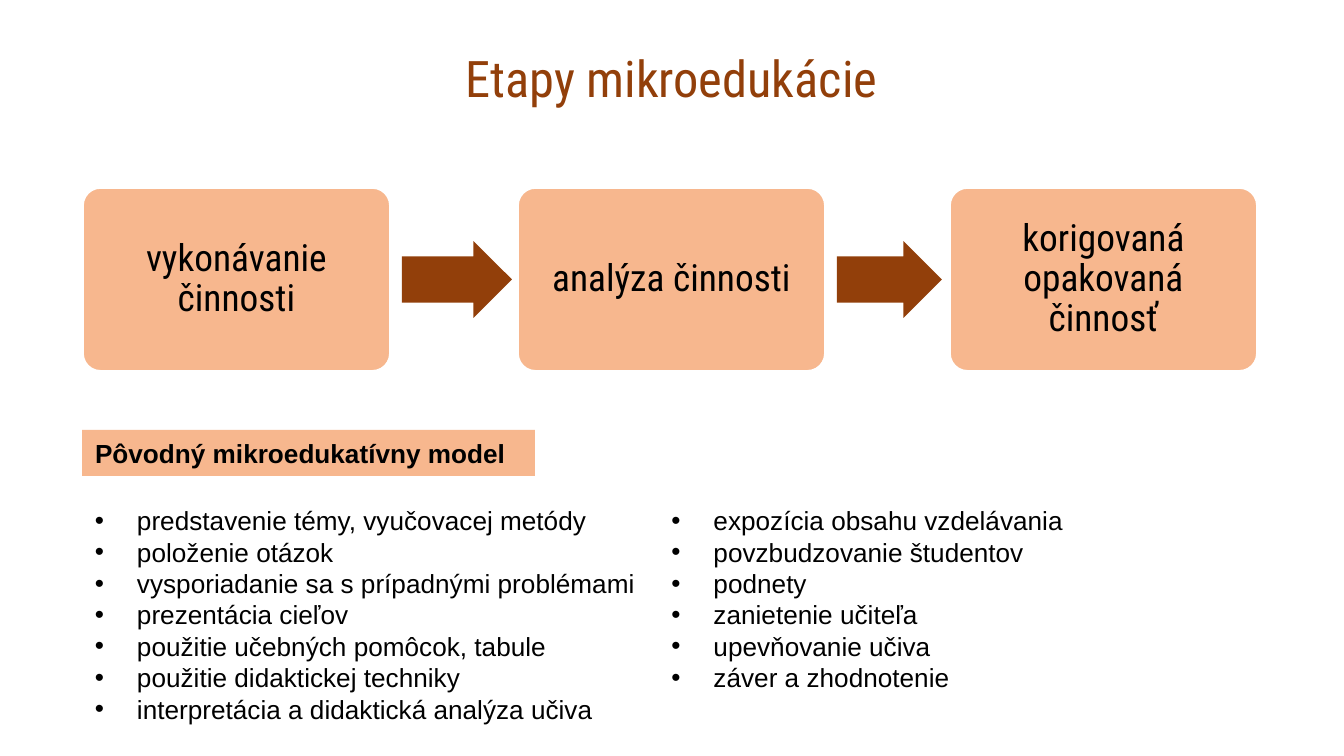
from lxml.etree import SubElement
from pptx import Presentation
from pptx.dml.color import RGBColor
from pptx.enum.shapes import MSO_SHAPE as Shape
from pptx.enum.text import MSO_ANCHOR as Anchor, PP_ALIGN as Align
from pptx.oxml.ns import qn
from pptx.util import Pt

TITLE = "Etapy mikroedukácie"
STAGES = [
    (82, "vykonávanie činnosti"),
    (517, "analýza činnosti"),
    (949, "korigovaná opakovaná činnosť"),
]
ARROWS = [(402, 110), (837, 105)]
LABEL = "Pôvodný mikroedukatívny model"
ITEMS = [
    "predstavenie témy, vyučovacej metódy",
    "položenie otázok",
    "vysporiadanie sa s prípadnými problémami",
    "prezentácia cieľov",
    "použitie učebných pomôcok, tabule",
    "použitie didaktickej techniky",
    "interpretácia a didaktická analýza učiva",
    "expozícia obsahu vzdelávania",
    "povzbudzovanie študentov",
    "podnety",
    "zanietenie učiteľa",
    "upevňovanie učiva",
    "záver a zhodnotenie",
]
COLORS = {"brown": "923F0A", "peach": "F7B78E", "black": "000000", "white": "FFFFFF"}
HEAD_FONT, BODY_FONT = "Roboto Condensed", "Arial"
EMU_PER_PX = 914400 / 134.4
STAGE_TOP, STAGE_WIDTH, STAGE_HEIGHT = 187, 309, 185
ARROW_HEIGHT = 77
INDENT = 42


def px(length):
    return round(length * EMU_PER_PX)


def color(name):
    return RGBColor.from_string(COLORS[name])


def add_box(page, kind, place, fill, line=None):
    box = page.shapes.add_shape(kind, *map(px, place))
    box.shadow.inherit = False
    box.fill.solid()
    box.fill.fore_color.rgb = color(fill)
    if line:
        box.line.color.rgb = color(line)
        box.line.width = Pt(2)
    else:
        box.line.fill.background()
    return box


def write(box, lines, size, font, ink="black", align=Align.LEFT, inset=13, bold=False):
    frame = box.text_frame
    frame.word_wrap = True
    frame.vertical_anchor = Anchor.MIDDLE
    frame.margin_left = frame.margin_right = px(inset)
    frame.margin_top = frame.margin_bottom = px(min(inset, 13))
    for number, line in enumerate(lines):
        para = frame.add_paragraph() if number else frame.paragraphs[0]
        para.alignment = align
        span = para.add_run()
        span.text = line
        span.font.size = Pt(size)
        span.font.name = font
        span.font.bold = bold
        span.font.color.rgb = color(ink)
    return frame


def add_bullet(para):
    props = para._p.get_or_add_pPr()
    props.set("marL", str(px(INDENT)))
    props.set("indent", str(-px(INDENT)))
    SubElement(props, qn("a:buFont"), typeface=BODY_FONT)
    SubElement(props, qn("a:buChar"), char="•")


def main():
    deck = Presentation()
    deck.slide_width, deck.slide_height = px(1344), px(756)
    page = deck.slides.add_slide(deck.slide_layouts[6])

    title = page.shapes.add_textbox(*map(px, (66, 61, 1211, 32)))
    write(title, [TITLE], 27, HEAD_FONT, "brown", Align.CENTER)

    for left, name in STAGES:
        place = (left, STAGE_TOP, STAGE_WIDTH, STAGE_HEIGHT)
        stage = add_box(page, Shape.ROUNDED_RECTANGLE, place, "peach", "white")
        stage.adjustments[0] = 0.1
        frame = write(stage, [name], 20, HEAD_FONT, align=Align.CENTER, inset=12)
        frame.paragraphs[0].line_spacing = 0.9

    arrow_top = STAGE_TOP + (STAGE_HEIGHT - ARROW_HEIGHT) / 2
    for left, width in ARROWS:
        place = (left, arrow_top, width, ARROW_HEIGHT)
        arrow = add_box(page, Shape.RIGHT_ARROW, place, "brown")
        arrow.adjustments[0] = 0.6
        arrow.adjustments[1] = 0.5

    listing = page.shapes.add_textbox(*map(px, (82, 489, 1179, 251)))
    frame = write(listing, ITEMS, 14, BODY_FONT)
    frame._txBody.bodyPr.set("numCol", "2")
    for para in frame.paragraphs:
        add_bullet(para)

    label = add_box(page, Shape.RECTANGLE, (82, 430, 453, 46), "peach")
    frame = write(label, [LABEL], 14, BODY_FONT, bold=True)
    frame.margin_top = frame.margin_bottom = px(6)

    deck.save("out.pptx")


if __name__ == "__main__":
    main()
